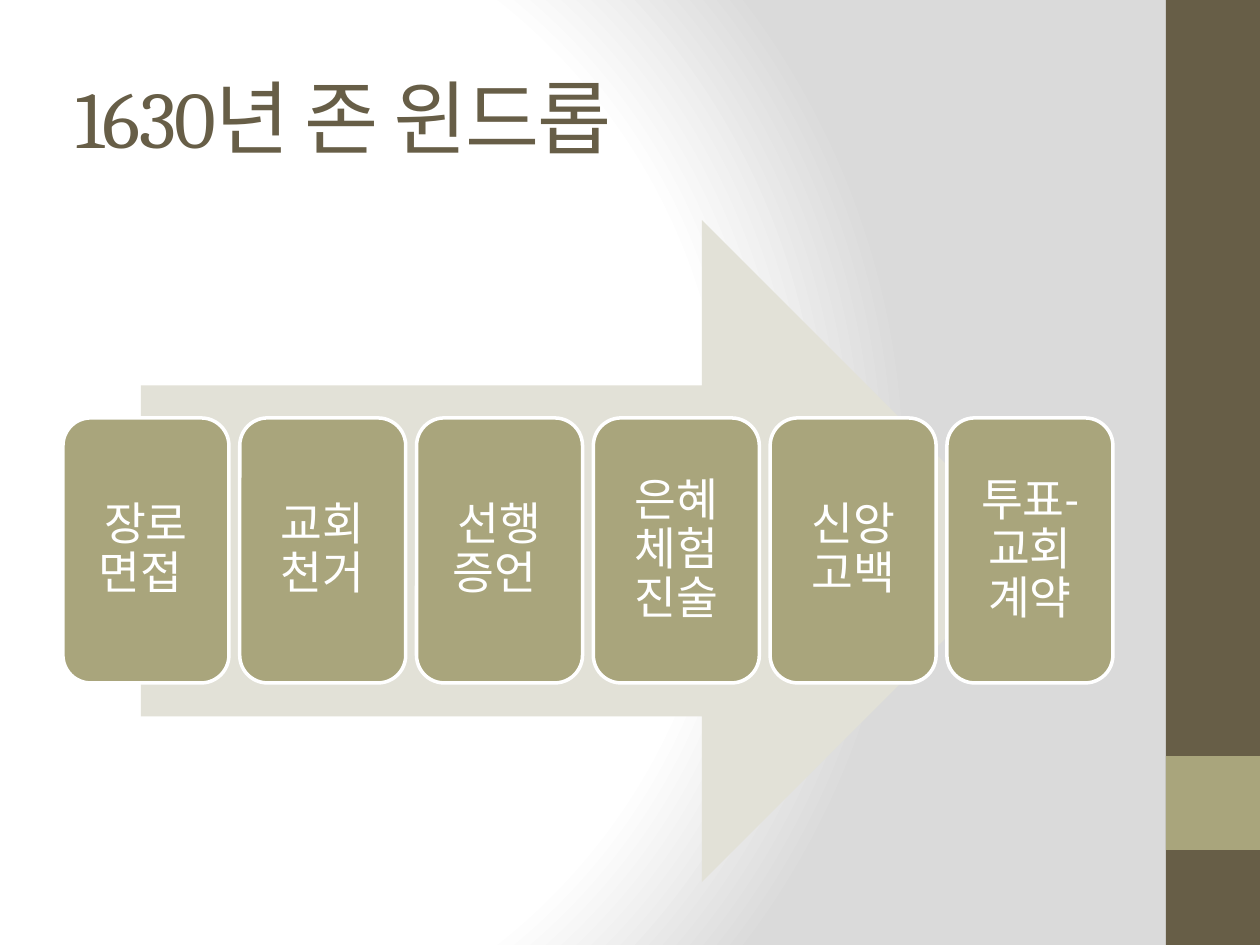
"""Build a slide with six steps to church membership on a broad arrow."""
from dataclasses import dataclass

from pptx import Presentation
from pptx.dml.color import RGBColor
from pptx.enum.shapes import MSO_SHAPE
from pptx.enum.text import MSO_ANCHOR, MSO_AUTO_SIZE, PP_ALIGN
from pptx.oxml import parse_xml
from pptx.oxml.ns import nsdecls
from pptx.util import Emu, Pt

RECT, ROUND, ARROW = MSO_SHAPE.RECTANGLE, MSO_SHAPE.ROUNDED_RECTANGLE, MSO_SHAPE.RIGHT_ARROW
MIDDLE = MSO_ANCHOR.MIDDLE
LEFT, CENTER = PP_ALIGN.LEFT, PP_ALIGN.CENTER
FIXED = MSO_AUTO_SIZE.NONE


@dataclass
class Theme:
    dark: str = "675E47"
    olive: str = "A9A57C"
    pale: str = "E2E1D7"
    white: str = "FFFFFF"
    gray: str = "DADADA"
    head: str = "Cambria"
    body: str = "Calibri"
    big: int = 46
    small: int = 26


theme = Theme()


def px(size):
    return Emu(round(size * 914400 / 126))


def block(kind, left, top, width, height, color):
    shape = slide.shapes.add_shape(kind, px(left), px(top), px(width), px(height))
    shape.shadow.inherit = False
    shape.fill.solid()
    shape.fill.fore_color.rgb = RGBColor.from_string(color)
    shape.line.fill.background()
    return shape


deck = Presentation()
deck.slide_width, deck.slide_height = px(1260), px(945)
slide = deck.slides.add_slide(deck.slide_layouts[5])

slide.background.fill.solid()
plain = slide.element.find(".//{*}bgPr/{*}solidFill")
stops = "".join(
    f'<a:gs pos="{pos}"><a:srgbClr val="{color}"/></a:gs>'
    for pos, color in ((0, theme.white), (75000, theme.white), (100000, theme.gray))
)
glow = parse_xml(
    f'<a:gradFill {nsdecls("a")} rotWithShape="1"><a:gsLst>{stops}</a:gsLst>'
    '<a:path path="circle"><a:fillToRect l="20000" t="50000" r="100000" b="50000"/>'
    "</a:path></a:gradFill>"
)
plain.getparent().replace(plain, glow)

block(RECT, 1166, 0, 94, 945, theme.dark)
block(RECT, 1166, 756, 94, 94, theme.olive)

title = slide.shapes.title
title.left, title.top, title.width, title.height = px(63), px(38), px(1050), px(157)
frame = title.text_frame
frame.text = "1630년 존 윈드롭"
frame.vertical_anchor = MIDDLE
frame.auto_size = FIXED
para = frame.paragraphs[0]
para.alignment = LEFT
para.font.name = theme.head
para.font.size = Pt(theme.big)
para.font.color.rgb = RGBColor.from_string(theme.dark)
para.font._rPr.set("spc", "-100")

block(ARROW, 141, 220, 892, 662, theme.pale)

steps = ["장로 면접 ", "교회 천거", "선행 증언 ", "은혜 체험 진술", "신앙 고백", "투표-교회 계약"]
start, span, width = 63, 1050, 166
pitch = (span - width) / (len(steps) - 1)
for index, step in enumerate(steps):
    card = block(ROUND, start + index * pitch, 418, width, 265, theme.olive)
    card.line.color.rgb = RGBColor.from_string(theme.white)
    card.line.width = Pt(2)
    frame = card.text_frame
    frame.text = step
    frame.word_wrap = True
    frame.vertical_anchor = MIDDLE
    frame.margin_left = frame.margin_right = px(14)
    frame.margin_top = frame.margin_bottom = px(14)
    para = frame.paragraphs[0]
    para.alignment = CENTER
    para.line_spacing = 0.9
    para.font.name = theme.body
    para.font.size = Pt(theme.small)
    para.font.color.rgb = RGBColor.from_string(theme.white)

deck.save("out.pptx")
